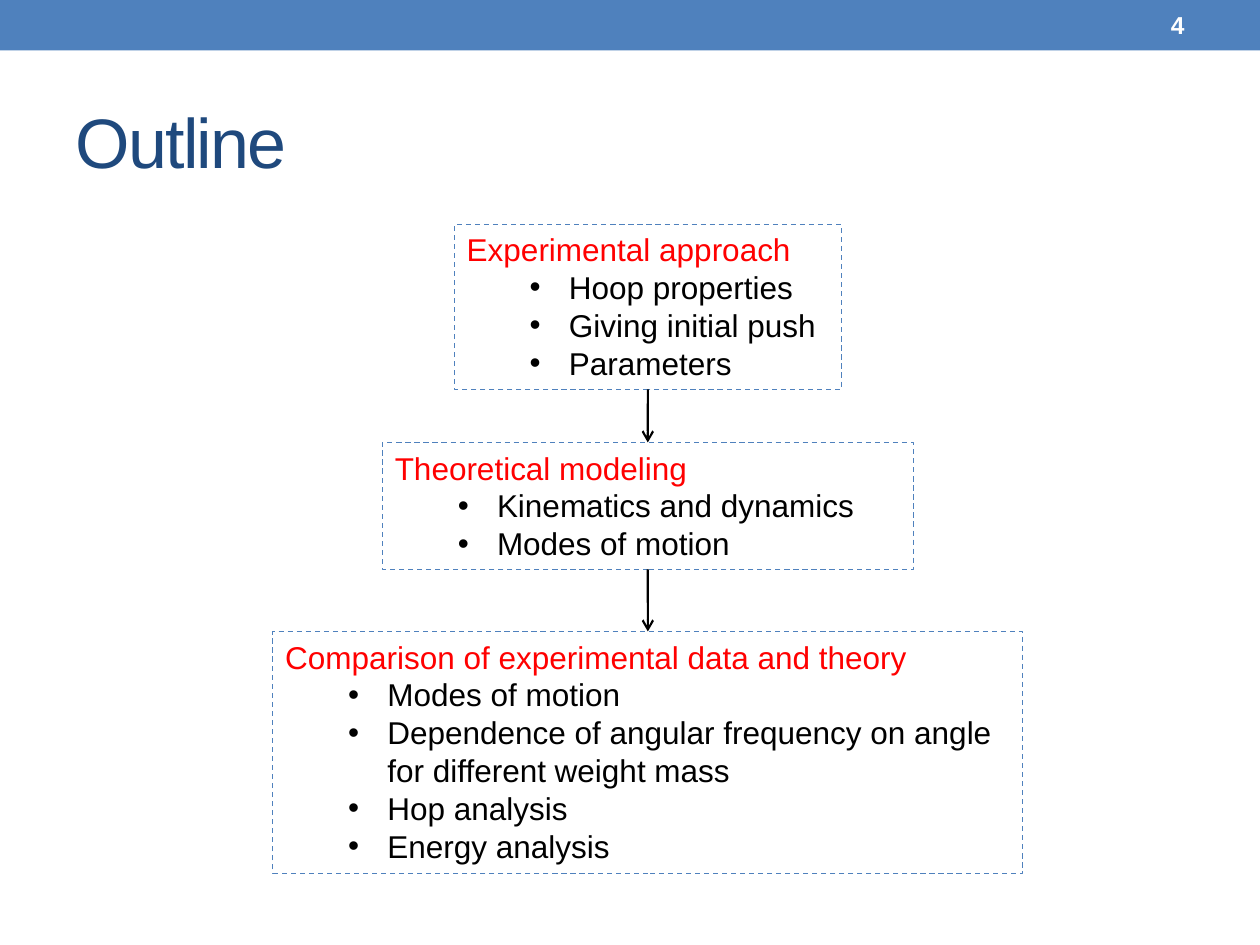
import pptx
import pptx.dml.color
import pptx.enum.dml
import pptx.enum.shapes
import pptx.enum.text
import pptx.oxml
import pptx.oxml.ns
import pptx.util

Cm = pptx.util.Cm
Pt = pptx.util.Pt
RGBColor = pptx.dml.color.RGBColor
Align = pptx.enum.text.PP_ALIGN
Anchor = pptx.enum.text.MSO_ANCHOR
RECTANGLE = pptx.enum.shapes.MSO_SHAPE.RECTANGLE

BLUE = RGBColor(0x4F, 0x81, 0xBD)
NAVY = RGBColor(0x1F, 0x49, 0x7D)
RED = RGBColor(0xFF, 0x00, 0x00)
BLACK = RGBColor(0x00, 0x00, 0x00)
WHITE = RGBColor(0xFF, 0xFF, 0xFF)

SLIDE_WIDTH, SLIDE_HEIGHT = 25.4, 19.05
FLOW_CENTER = 13.06

# Heading, bullet points, top, width and height in cm
STAGES = [
    ("Experimental approach",
     ["Hoop properties", "Giving initial push", "Parameters"],
     4.52, 7.8, 3.33),
    ("Theoretical modeling",
     ["Kinematics and dynamics", "Modes of motion"],
     8.92, 10.7, 2.56),
    ("Comparison of experimental data and theory",
     ["Modes of motion",
      "Dependence of angular frequency on angle for different weight mass",
      "Hop analysis", "Energy analysis"],
     12.73, 15.12, 4.88),
]


class OutlineSlide:
    font_name = "Arial"
    body_size = 18

    def __init__(self, presentation):
        self.slide = presentation.slides.add_slide(presentation.slide_layouts[5])

    def add_run(self, paragraph, text, size, color, bold=False):
        run = paragraph.add_run()
        run.text = text
        run.font.name = self.font_name
        run.font.size = Pt(size)
        run.font.color.rgb = color
        run.font.bold = bold
        return run

    def add_band(self, height):
        band = self.slide.shapes.add_shape(
            RECTANGLE, 0, 0, Cm(SLIDE_WIDTH), Cm(height))
        band.shadow.inherit = False
        band.fill.solid()
        band.fill.fore_color.rgb = BLUE
        band.line.fill.background()

    def set_title(self, text, left, top, width, height):
        title = self.slide.shapes.title
        title.left, title.top = Cm(left), Cm(top)
        title.width, title.height = Cm(width), Cm(height)
        title.text_frame.vertical_anchor = Anchor.MIDDLE
        paragraph = title.text_frame.paragraphs[0]
        paragraph.alignment = Align.LEFT
        run = self.add_run(paragraph, text, 40, NAVY)
        run.font._element.set("spc", "-100")

    def add_page_number(self, text, left, top, width, height):
        box = self.slide.shapes.add_textbox(
            Cm(left), Cm(top), Cm(width), Cm(height))
        box.text_frame.word_wrap = True
        box.text_frame.vertical_anchor = Anchor.MIDDLE
        paragraph = box.text_frame.paragraphs[0]
        paragraph.alignment = Align.RIGHT
        self.add_run(paragraph, text, 14, WHITE, bold=True)

    def add_bullet(self, text_frame, text):
        paragraph = text_frame.add_paragraph()
        paragraph.alignment = Align.LEFT
        paragraph.level = 1
        properties = paragraph._p.get_or_add_pPr()
        properties.set("marL", str(Cm(2.06)))
        properties.set("indent", str(-Cm(0.79)))
        for tag, name, value in (("a:buFont", "typeface", self.font_name),
                                 ("a:buChar", "char", "•")):
            element = pptx.oxml.ns.qn(tag)
            properties.append(properties.makeelement(element, {name: value}))
        self.add_run(paragraph, text, self.body_size, BLACK)

    def add_stage(self, heading, points, top, width, height):
        box = self.slide.shapes.add_shape(
            RECTANGLE, Cm(FLOW_CENTER - width / 2), Cm(top), Cm(width), Cm(height))
        box.shadow.inherit = False
        box.fill.background()
        box.line.color.rgb = BLUE
        box.line.width = Pt(0.75)
        box.line.dash_style = pptx.enum.dml.MSO_LINE.DASH
        text_frame = box.text_frame
        text_frame.word_wrap = True
        text_frame.auto_size = pptx.enum.text.MSO_AUTO_SIZE.SHAPE_TO_FIT_TEXT
        text_frame.vertical_anchor = Anchor.TOP
        paragraph = text_frame.paragraphs[0]
        paragraph.alignment = Align.LEFT
        self.add_run(paragraph, heading, self.body_size, RED)
        for point in points:
            self.add_bullet(text_frame, point)
        return box

    def add_arrow(self, upper, lower):
        arrow = self.slide.shapes.add_connector(
            pptx.enum.shapes.MSO_CONNECTOR.STRAIGHT, 0, 0, 0, 0)
        arrow.begin_connect(upper, 2)
        arrow.end_connect(lower, 0)
        arrow.line.color.rgb = BLACK
        arrow.line.width = Pt(1.25)
        namespace = pptx.oxml.ns.nsdecls("a")
        arrow.line._get_or_add_ln().append(
            pptx.oxml.parse_xml(f'<a:tailEnd {namespace} type="arrow"/>'))
        arrow._element.spPr.append(
            pptx.oxml.parse_xml(f"<a:effectLst {namespace}/>"))


def main():
    presentation = pptx.Presentation()
    presentation.slide_width = Cm(SLIDE_WIDTH)
    presentation.slide_height = Cm(SLIDE_HEIGHT)
    outline = OutlineSlide(presentation)

    # Header band and title
    outline.add_band(1.02)
    outline.set_title("Outline", 1.27, 1.47, 22.86, 2.74)

    # Stages from top to bottom, joined by arrows
    boxes = [outline.add_stage(*stage) for stage in STAGES]
    for upper, lower in zip(boxes, boxes[1:]):
        outline.add_arrow(upper, lower)

    # Page number on the band
    outline.add_page_number("4", 21.16, 0.05, 2.97, 0.91)

    presentation.save("out.pptx")


if __name__ == "__main__":
    main()
